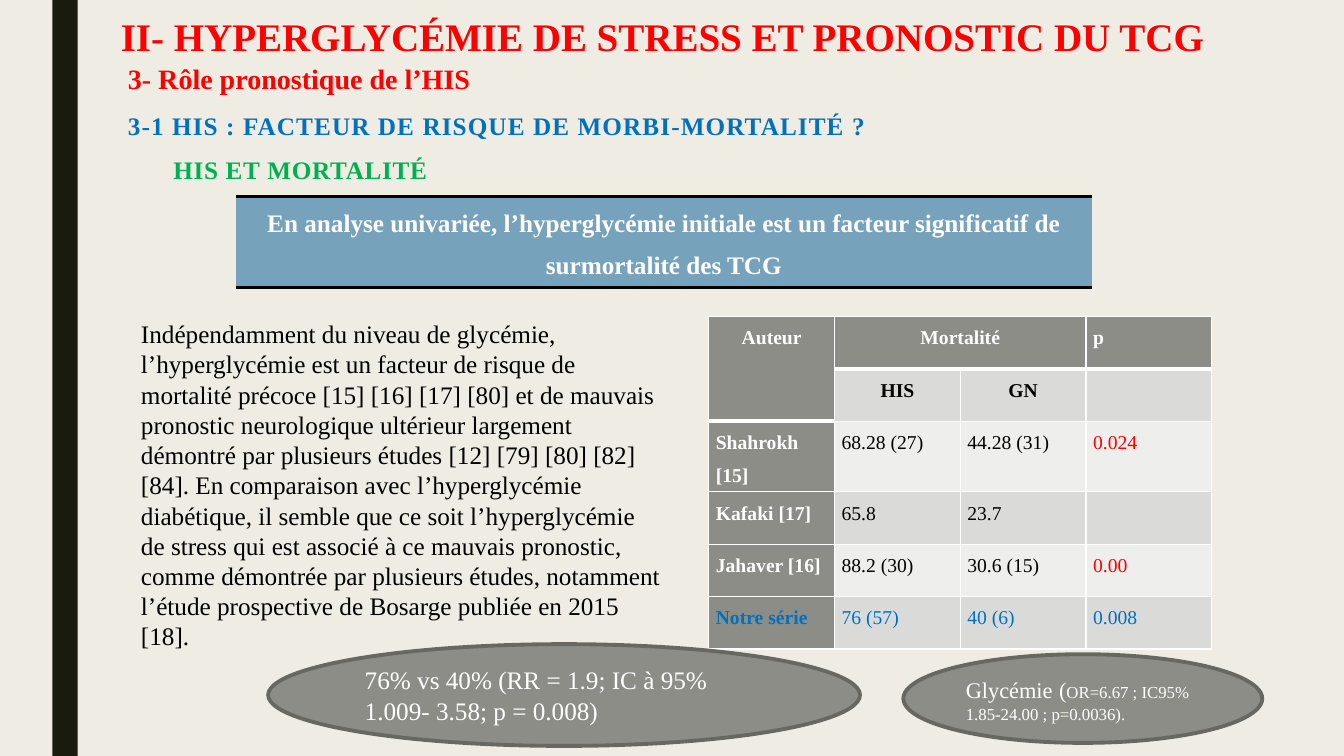
import lxml.etree
import pptx
import pptx.dml.color
import pptx.enum.shapes
import pptx.enum.text
import pptx.oxml.ns
import pptx.util

PX = 9144  # one hundred px to the inch
FONT = "Times New Roman"
RED, BLUE, GREEN = "FF0000", "0070C0", "00B050"
BLACK, WHITE, GREY = "000000", "FFFFFF", "8C8D86"
PLAIN_TABLE = "{2D5ABB26-0587-4C30-8999-92F81FD0307C}"
ALIGN = pptx.enum.text.PP_ALIGN
SHAPE = pptx.enum.shapes.MSO_SHAPE

HEADINGS = [  # box, text, size, colour, letter spacing, paragraph format
    ((110, 13, 1142, 60), "II- HYPERGLYCÉMIE DE STRESS ET PRONOSTIC DU TCG",
     27.9, RED, 0, {"line_spacing": 0.89}),
    ((117, 56, 362, 44), "3- Rôle pronostique de l’HIS", 20, RED, 0, {}),
    ((117, 100, 779, 42), "3-1 HIS : FACTEUR DE RISQUE DE MORBI-MORTALITÉ ?",
     18, BLUE, 80, {"line_spacing": 1.15, "space_before": pptx.util.Pt(15)}),
    ((162, 144, 275, 42), "HIS ET MORTALITÉ",
     18, GREEN, 50, {"line_spacing": 1.15, "space_before": pptx.util.Pt(15)}),
]
BANNER = ("En analyse univariée, l’hyperglycémie initiale est un facteur "
          "significatif de surmortalité des TCG")
BODY = (
    "Indépendamment du niveau de glycémie, l’hyperglycémie est un facteur de risque de "
    "mortalité précoce [15] [16] [17] [80] et de mauvais pronostic neurologique ultérieur "
    "largement démontré par plusieurs études [12] [79] [80] [82] [84]. En comparaison avec "
    "l’hyperglycémie diabétique, il semble que ce soit l’hyperglycémie de stress qui est "
    "associé à ce mauvais pronostic, comme démontrée par plusieurs études, notamment "
    "l’étude prospective de Bosarge publiée en 2015 [18].")
MORTALITY = [
    ["Auteur", "Mortalité", "", "p"],
    ["", "HIS", "GN", ""],
    ["Shahrokh [15]", "68.28 (27)", "44.28 (31)", "0.024"],
    ["Kafaki [17]", "65.8", "23.7", ""],
    ["Jahaver [16]", "88.2 (30)", "30.6 (15)", "0.00"],
    ["Notre série", "76 (57)", "40 (6)", "0.008"],
]


def colour(value):
    return pptx.dml.color.RGBColor.from_string(value)


def emu(box):
    return [length * PX for length in box]


def apply(target, values):
    for name, value in values.items():
        setattr(target, name, value)


def add_span(para, text, size, hue, bold=False, spacing=0):
    span = para.add_run()
    span.text = text
    apply(span.font, {"name": FONT, "size": pptx.util.Pt(size), "bold": bold})
    span.font.color.rgb = colour(hue)
    if spacing:
        span._r.get_or_add_rPr().set("spc", str(spacing))


def add_text(page, box, text, size, hue, bold=False, spacing=0, layout=None, wrap=True):
    frame = page.shapes.add_textbox(*emu(box)).text_frame
    frame.word_wrap = wrap
    para = frame.paragraphs[0]
    apply(para, layout or {})
    add_span(para, text, size, hue, bold, spacing)


def add_side_rail(page, box):
    rail = page.shapes.add_shape(SHAPE.RECTANGLE, *emu(box))
    rail.shadow.inherit = False
    rail.fill.solid()
    rail.fill.fore_color.rgb = colour("191B0E")
    rail.line.fill.background()


def add_headings(page):
    for index, (box, text, size, hue, spacing, layout) in enumerate(HEADINGS):
        add_text(page, box, text, size, hue, True, spacing, layout, wrap=index == 0)


def add_plain_table(page, box, rows, columns, row_height):
    table = page.shapes.add_table(rows, columns, *emu(box)).table
    table._tbl.tblPr.find(pptx.oxml.ns.qn("a:tableStyleId")).text = PLAIN_TABLE
    for row in table.rows:
        row.height = row_height * PX
    return table


def format_cell(cell, fill, borders, hue):
    """Borders map a side (L, R, T, B) to a width in points."""
    apply(cell, {"margin_left": 7 * PX, "margin_right": 7 * PX,
                 "margin_top": 0, "margin_bottom": 0})
    properties = cell._tc.get_or_add_tcPr()
    for side, width in borders.items():
        line = lxml.etree.SubElement(properties, pptx.oxml.ns.qn("a:ln" + side),
                                     w=str(pptx.util.Pt(width)))
        solid = lxml.etree.SubElement(line, pptx.oxml.ns.qn("a:solidFill"))
        lxml.etree.SubElement(solid, pptx.oxml.ns.qn("a:srgbClr"), val=hue)
    cell.fill.solid()
    cell.fill.fore_color.rgb = colour(fill)


def write_cell(cell, text, size, hue, bold, align):
    para = cell.text_frame.paragraphs[0]
    apply(para, {"alignment": align, "line_spacing": 1.5})
    add_span(para, text, size, hue, bold)


def add_banner(page, box):
    cell = add_plain_table(page, box, 1, 1, box[3]).cell(0, 0)
    format_cell(cell, "77A2BB", {"T": 2, "B": 2}, BLACK)
    write_cell(cell, BANNER, 18, WHITE, True, ALIGN.CENTER)


def mortality_hue(row, column):
    if row == len(MORTALITY) - 1:
        return BLUE
    if row == 0 or column == 0:
        return WHITE
    return RED if column == 3 else BLACK


def add_mortality_table(page, box):
    table = add_plain_table(page, box, len(MORTALITY), 4, 52)
    table.cell(0, 0).merge(table.cell(1, 0))
    table.cell(0, 1).merge(table.cell(0, 2))
    for row, texts in enumerate(MORTALITY):
        for column, text in enumerate(texts):
            cell = table.cell(row, column)
            header = row == 0 or column == 0
            band = "DADBD9" if row % 2 else "EEEEED"
            thick_top = row == (2 if column == 0 else 1)
            thick_bottom = row == 0 or (row, column) == (1, 0)
            borders = {"L": 1, "R": 1, "T": 3 if thick_top else 1,
                       "B": 3 if thick_bottom else 1}
            format_cell(cell, GREY if header else band, borders, WHITE)
            if text:
                centred = row < 2 and column < 3
                write_cell(cell, text, 14, mortality_hue(row, column), header or row == 1,
                           ALIGN.CENTER if centred else ALIGN.JUSTIFY)


def add_result_ellipse(page, box, spans):
    ellipse = page.shapes.add_shape(SHAPE.OVAL, *emu(box))
    ellipse.shadow.inherit = False
    ellipse.fill.solid()
    ellipse.fill.fore_color.rgb = colour(GREY)
    ellipse.line.color.rgb = colour("686863")
    ellipse.line.width = pptx.util.Pt(2.75)
    frame = ellipse.text_frame
    apply(frame, {"word_wrap": True, "vertical_anchor": pptx.enum.text.MSO_ANCHOR.MIDDLE})
    para = frame.paragraphs[0]
    para.alignment = ALIGN.LEFT
    for text, size in spans:
        add_span(para, text, size, WHITE)


def main():
    deck = pptx.Presentation()
    apply(deck, {"slide_width": 1333 * PX, "slide_height": 750 * PX})
    page = deck.slides.add_slide(deck.slide_layouts[6])
    page.background.fill.solid()
    page.background.fill.fore_color.rgb = colour("EFEDE3")
    add_side_rail(page, (52, 0, 25, 750))
    add_headings(page)
    add_banner(page, (234, 195, 849, 85))
    add_text(page, (130, 311, 537, 343), BODY, 18, BLACK)
    add_mortality_table(page, (703, 314, 499, 325))
    add_result_ellipse(page, (266, 639, 587, 101), [
        ("76% vs 40% (RR = 1.9; IC à 95% 1.009- 3.58; p = 0.008)", 18)])
    add_result_ellipse(page, (896, 649, 356, 88), [
        ("Glycémie", 16), (" ", 18), ("(", 16),
        ("OR=6.67 ; IC95% 1.85-24.00 ; p=0.0036).", 12)])
    deck.save("out.pptx")


if __name__ == "__main__":
    main()
